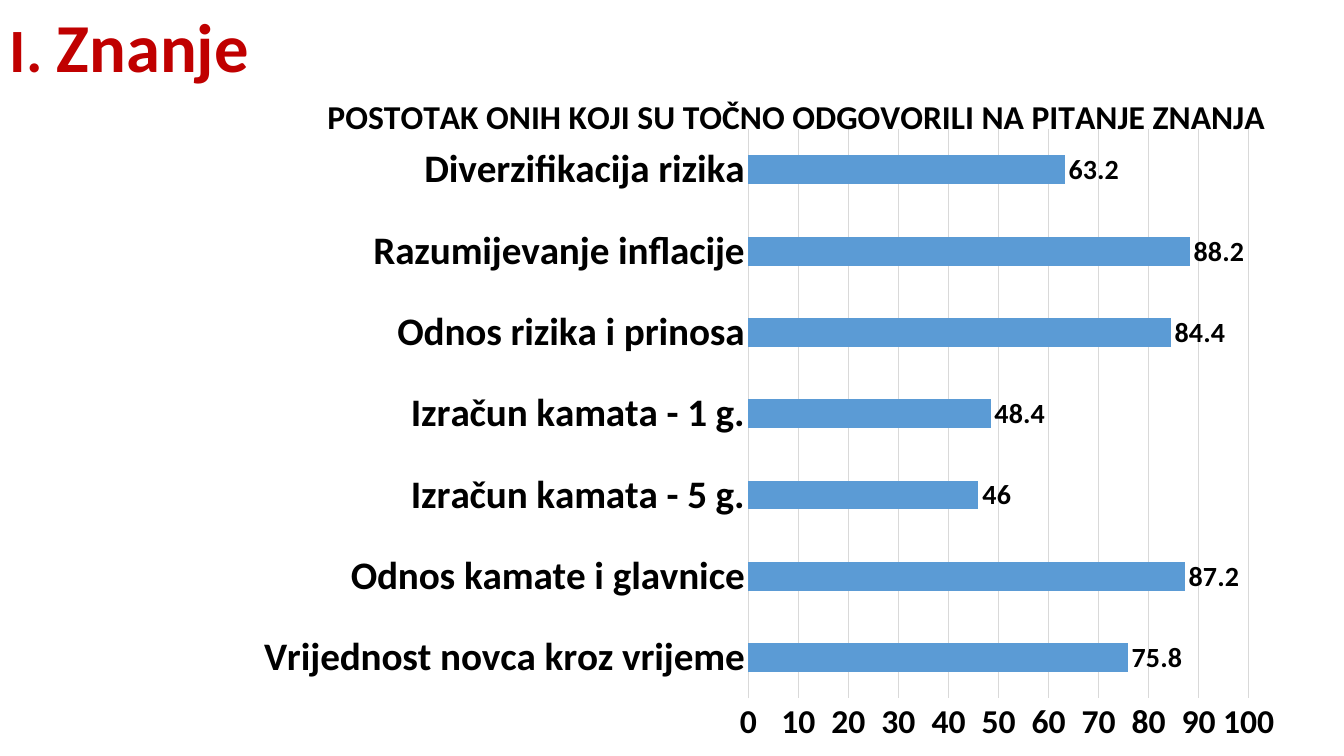
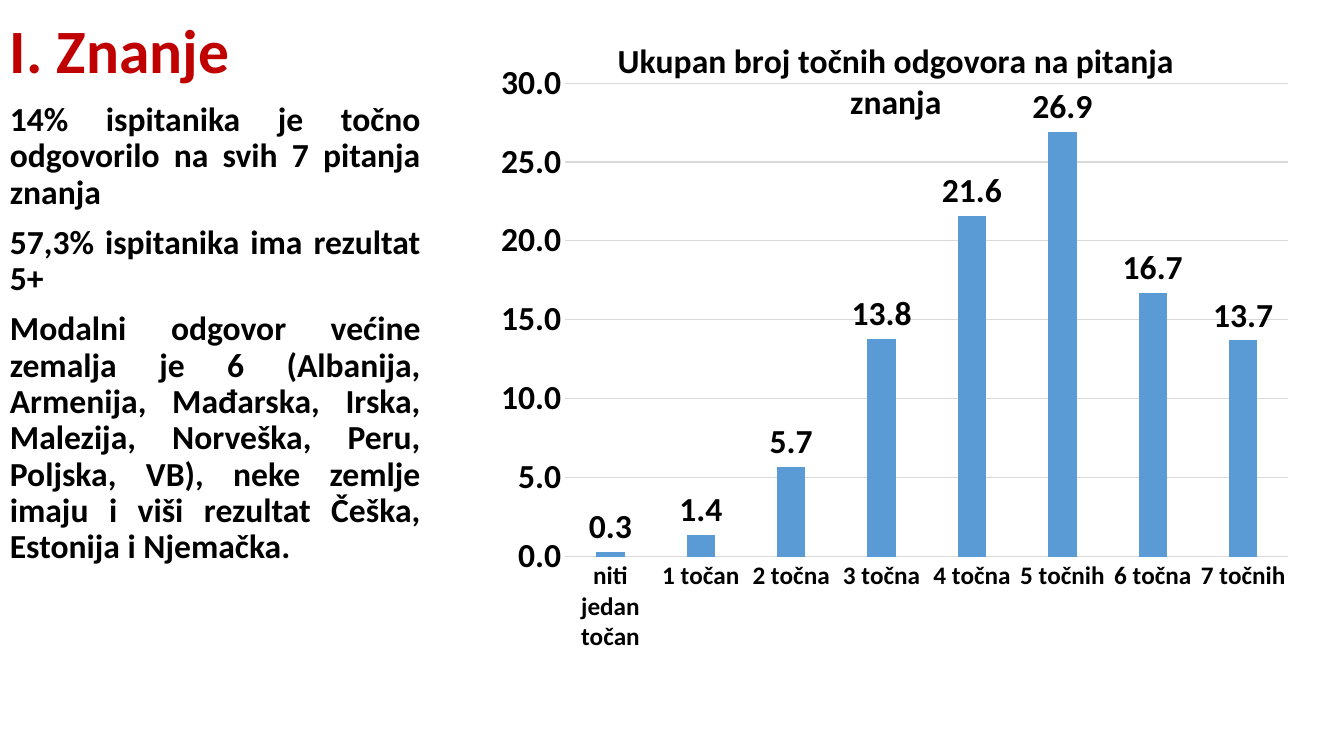
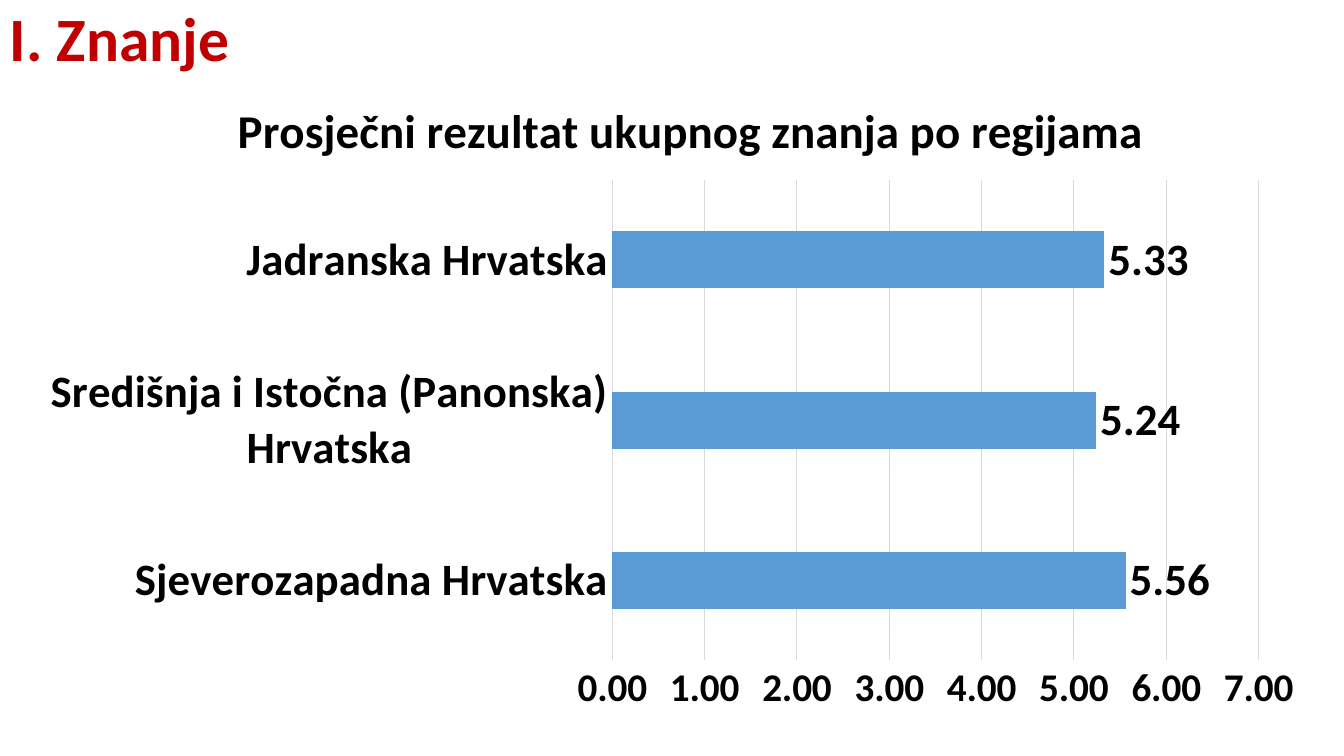
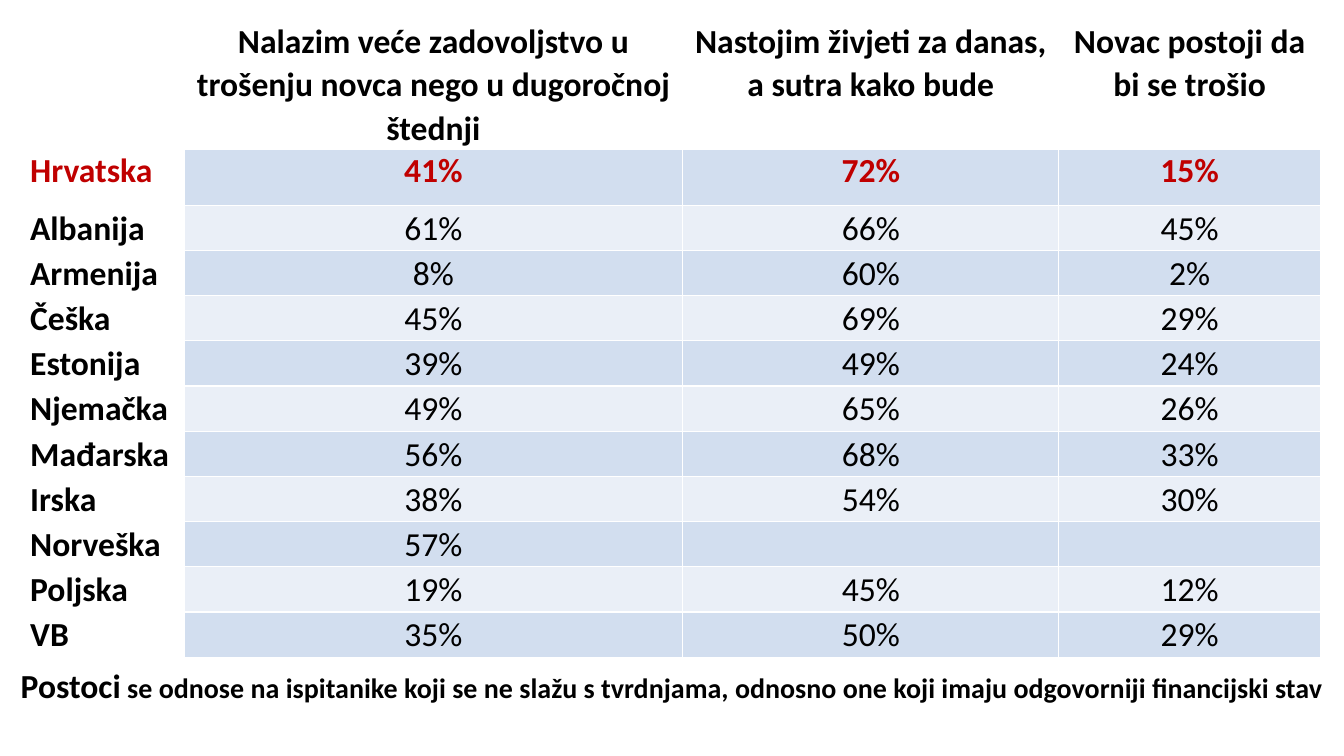
from dataclasses import dataclass

from lxml import etree
from pptx import Presentation
from pptx.chart.data import CategoryChartData
from pptx.dml.color import RGBColor
from pptx.enum.chart import XL_CHART_TYPE, XL_LABEL_POSITION, XL_TICK_MARK
from pptx.enum.text import MSO_ANCHOR, PP_ALIGN
from pptx.oxml.ns import qn
from pptx.util import Cm, Pt

BAR, COLUMN = XL_CHART_TYPE.BAR_CLUSTERED, XL_CHART_TYPE.COLUMN_CLUSTERED
OUTSIDE_END = XL_LABEL_POSITION.OUTSIDE_END
NO_TICK = XL_TICK_MARK.NONE
MIDDLE, TOP = MSO_ANCHOR.MIDDLE, MSO_ANCHOR.TOP
LEFT, CENTER, JUSTIFY = PP_ALIGN.LEFT, PP_ALIGN.CENTER, PP_ALIGN.JUSTIFY

FONT = "Calibri"
BLACK, RED, WHITE = "000000", "C00000", "FFFFFF"
BAR_BLUE, GRID_GREY = "5B9BD5", "D9D9D9"
BANDS = ("D2DEEF", "EAEFF7")


@dataclass(frozen=True)
class Box:
    """A place on the slide, in centimetres."""
    left: float
    top: float
    width: float
    height: float

    def lengths(self) -> tuple:
        return Cm(self.left), Cm(self.top), Cm(self.width), Cm(self.height)


@dataclass(frozen=True)
class BarChart:
    """Title place and plot area are fractions of the chart's size."""
    kind: int
    box: Box
    title: str
    title_size: float
    values: dict
    plot: tuple
    category_size: int
    value_size: int
    label_size: int
    gap: int
    title_place: tuple = ()
    overlap: int = 0
    number_format: str = "General"
    maximum: float | None = None


KNOWLEDGE_QUESTIONS = BarChart(
    BAR, Box(0.76, 1.98, 31.37, 16.74),
    "POSTOTAK ONIH KOJI SU TOČNO ODGOVORILI NA PITANJE ZNANJA", 24,
    {
        "Vrijednost novca kroz vrijeme": 75.8,
        "Odnos kamate i glavnice": 87.2,
        "Izračun kamata - 5 g.": 46,
        "Izračun kamata - 1 g.": 48.4,
        "Odnos rizika i prinosa": 84.4,
        "Razumijevanje inflacije": 88.2,
        "Diverzifikacija rizika": 63.2,
    },
    plot=(0.577, 0.077, 0.402, 0.864), title_place=(0.234, 0.014),
    category_size=28, value_size=24, label_size=20, gap=182)

CORRECT_ANSWERS = BarChart(
    COLUMN, Box(12.29, 0.33, 20.57, 17.3),
    "Ukupan broj točnih odgovora na pitanja znanja", 24,
    {
        "niti jedan točan": 0.3,
        "1 točan": 1.4,
        "2 točna": 5.7,
        "3 točna": 13.8,
        "4 točna": 21.6,
        "5 točnih": 26.9,
        "6 točna": 16.7,
        "7 točnih": 13.7,
    },
    plot=(0.095, 0.102, 0.886, 0.69),
    category_size=18, value_size=24, label_size=24, gap=219, overlap=-27,
    number_format="###0.0")

REGIONS = BarChart(
    BAR, Box(0.64, 1.57, 32.51, 16.64),
    "Prosječni rezultat ukupnog znanja po regijama", 33.6,
    {
        "Sjeverozapadna Hrvatska": 5.56,
        "Središnja i Istočna (Panonska) Hrvatska": 5.24,
        "Jadranska Hrvatska": 5.33,
    },
    plot=(0.455, 0.178, 0.501, 0.728), title_place=(0.158, 0.041),
    category_size=32, value_size=28, label_size=32, gap=182,
    number_format="0.00", maximum=7)

FINDINGS = (
    "14% ispitanika je točno odgovorilo na svih 7 pitanja znanja",
    "57,3% ispitanika ima rezultat 5+",
    "Modalni odgovor većine zemalja je 6 (Albanija, Armenija, Mađarska, Irska, "
    "Malezija, Norveška, Peru, Poljska, VB), neke zemlje imaju i viši rezultat "
    "Češka, Estonija i Njemačka.",
)

ATTITUDES = (
    ("", "Nalazim veće zadovoljstvo u trošenju novca nego u dugoročnoj štednji",
     "Nastojim živjeti za danas, a sutra kako bude", "Novac postoji da bi se trošio"),
    ("Hrvatska", "41%", "72%", "15%"),
    ("Albanija", "61%", "66%", "45%"),
    ("Armenija", "8%", "60%", "2%"),
    ("Češka", "45%", "69%", "29%"),
    ("Estonija", "39%", "49%", "24%"),
    ("Njemačka", "49%", "65%", "26%"),
    ("Mađarska", "56%", "68%", "33%"),
    ("Irska", "38%", "54%", "30%"),
    ("Norveška", "57%", "", ""),
    ("Poljska", "19%", "45%", "12%"),
    ("VB", "35%", "50%", "29%"),
)
HEADER_ROW, CROATIA_ROW = 0, 1
COLUMN_WIDTHS = (4.06, 12.57, 9.47, 6.6)
ROW_HEIGHTS = (2.49, 1.45) + (1.14,) * (len(ATTITUDES) - 2)


def rgb(colour: str) -> RGBColor:
    return RGBColor.from_string(colour)


def set_font(font, size: float, colour: str = BLACK, bold: bool = True) -> None:
    font.name, font.size, font.bold = FONT, Pt(size), bold
    font.color.rgb = rgb(colour)


def add_text(slide, box: Box, anchor=TOP):
    frame = slide.shapes.add_textbox(*box.lengths()).text_frame
    frame.word_wrap = True
    frame.vertical_anchor = anchor
    return frame


def add_sized_runs(paragraph, runs: tuple) -> None:
    for text, size in runs:
        run = paragraph.add_run()
        run.text = text
        run.font.size = Pt(size)


def add_title(slide, width: float, height: float, word_size: int = 44) -> None:
    heading = add_text(slide, Box(0, 0, width, height), MIDDLE).paragraphs[0]
    heading.line_spacing = 0.9
    set_font(heading.font, 44, RED)
    if word_size == 44:
        heading.text = "I. Znanje"
    else:
        add_sized_runs(heading, (("I. ", 44), ("Znanje", word_size)))


def place(layout, **fractions) -> None:
    """Fill a chart layout element with a manual position."""
    manual = etree.SubElement(layout, qn("c:manualLayout"))
    if "w" in fractions:
        etree.SubElement(manual, qn("c:layoutTarget")).set("val", "inner")
    for side in ("x", "y"):
        etree.SubElement(manual, qn(f"c:{side}Mode")).set("val", "edge")
    for name, fraction in fractions.items():
        etree.SubElement(manual, qn(f"c:{name}")).set("val", str(fraction))


def add_bar_chart(slide, content: BarChart) -> None:
    data = CategoryChartData()
    data.categories = list(content.values)
    data.add_series("Rezultat", list(content.values.values()))
    chart = slide.shapes.add_chart(content.kind, *content.box.lengths(), data).chart
    set_font(chart.font, content.value_size)
    chart.has_legend = False

    chart.has_title = True
    heading = chart.chart_title.text_frame.paragraphs[0]
    heading.text = content.title
    set_font(heading.font, content.title_size)
    set_font(heading.runs[0].font, content.title_size)
    if content.title_place:
        x, y = content.title_place
        place(chart.chart_title.element.find(qn("c:layout")), x=x, y=y)

    plot_area = chart.element.find(f".//{qn('c:plotArea')}")
    layout = plot_area.find(qn("c:layout"))
    if layout is None:
        layout = etree.Element(qn("c:layout"))
        plot_area.insert(0, layout)
    x, y, w, h = content.plot
    place(layout, x=x, y=y, w=w, h=h)

    categories, scale = chart.category_axis, chart.value_axis
    for axis, size in ((categories, content.category_size), (scale, content.value_size)):
        axis.major_tick_mark = axis.minor_tick_mark = NO_TICK
        set_font(axis.tick_labels.font, size)
    scale.has_major_gridlines = True
    for line in (categories.format.line, scale.major_gridlines.format.line):
        line.color.rgb = rgb(GRID_GREY)
        line.width = Pt(0.75)
    scale.format.line.fill.background()
    scale.minimum_scale = 0
    scale.maximum_scale = content.maximum

    plot = chart.plots[0]
    plot.vary_by_categories = False
    plot.gap_width, plot.overlap = content.gap, content.overlap
    bars = plot.series[0].format.fill
    bars.solid()
    bars.fore_color.rgb = rgb(BAR_BLUE)
    plot.has_data_labels = True
    labels = plot.data_labels
    labels.show_value = True
    labels.position = OUTSIDE_END
    set_font(labels.font, content.label_size)
    for numbers in (labels, scale.tick_labels):
        numbers.number_format = content.number_format
        numbers.number_format_is_linked = False


def add_borders(cell, bottom_width: float) -> None:
    properties = cell._tc.get_or_add_tcPr()
    for side, width in (("L", 1), ("R", 1), ("T", 1), ("B", bottom_width)):
        line = etree.SubElement(properties, qn(f"a:ln{side}"), w=str(Pt(width)))
        fill = etree.SubElement(line, qn("a:solidFill"))
        etree.SubElement(fill, qn("a:srgbClr"), val=WHITE)


def fill_cell(cell, text: str, row: int, column: int) -> None:
    is_head = row == HEADER_ROW or column == 0
    add_borders(cell, 3 if row == HEADER_ROW else 1)
    cell.fill.solid()
    cell.fill.fore_color.rgb = rgb(WHITE if is_head else BANDS[(row - 1) % 2])
    cell.margin_left = cell.margin_right = Cm(0.18)
    cell.margin_top = cell.margin_bottom = 0
    paragraph = cell.text_frame.paragraphs[0]
    paragraph.text = text
    paragraph.alignment = LEFT if column == 0 else CENTER
    paragraph.line_spacing = 1.07
    set_font(paragraph.font, 24, RED if row == CROATIA_ROW else BLACK,
             is_head or row == CROATIA_ROW)


def add_attitudes_table(slide) -> None:
    box = Box(0.58, 0.46, sum(COLUMN_WIDTHS), sum(ROW_HEIGHTS))
    table = slide.shapes.add_table(
        len(ATTITUDES), len(COLUMN_WIDTHS), *box.lengths()).table
    table.first_row = table.horz_banding = False
    for column, width in zip(table.columns, COLUMN_WIDTHS):
        column.width = Cm(width)
    for row, (texts, height) in enumerate(zip(ATTITUDES, ROW_HEIGHTS)):
        table.rows[row].height = Cm(height)
        for column, text in enumerate(texts):
            fill_cell(table.cell(row, column), text, row, column)


def add_findings(slide) -> None:
    frame = add_text(slide, Box(0, 2.46, 10.85, 15.11))
    for number, finding in enumerate(FINDINGS):
        paragraph = frame.add_paragraph() if number else frame.paragraphs[0]
        paragraph.text = finding
        paragraph.alignment = JUSTIFY
        paragraph.line_spacing = 0.9
        paragraph.space_before = Pt(10)
        set_font(paragraph.font, 24)


def add_table_note(slide) -> None:
    note = add_text(slide, Box(0, 16.64, 33.87, 1.27)).paragraphs[0]
    note.alignment = CENTER
    set_font(note.font, 20)
    add_sized_runs(note, (
        ("Postoci", 24),
        (" se odnose na ispitanike koji se ne slažu s tvrdnjama, "
         "odnosno one koji imaju odgovorniji financijski stav", 20)))


def main() -> None:
    deck = Presentation()
    deck.slide_width, deck.slide_height = Cm(33.87), Cm(19.05)
    blank = deck.slide_layouts[6]
    questions, answers, regions, attitudes = (
        deck.slides.add_slide(blank) for _ in range(4))

    add_title(questions, 6.86, 2.54, word_size=49)
    add_bar_chart(questions, KNOWLEDGE_QUESTIONS)

    add_title(answers, 12.65, 2.69)
    add_findings(answers)
    add_bar_chart(answers, CORRECT_ANSWERS)

    add_title(regions, 6.22, 2.11)
    add_bar_chart(regions, REGIONS)

    add_attitudes_table(attitudes)
    add_table_note(attitudes)

    deck.save("out.pptx")


if __name__ == "__main__":
    main()
